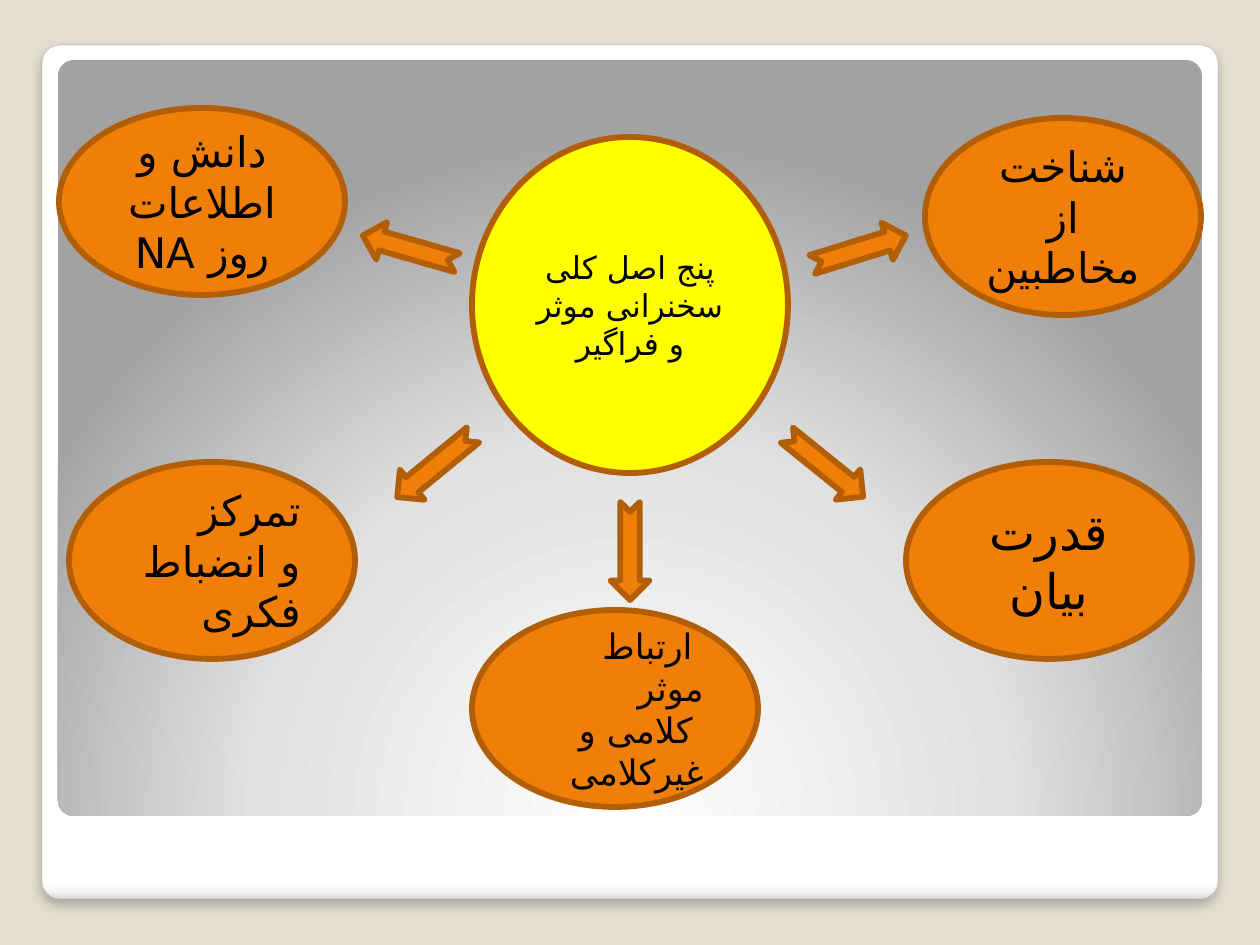
from pptx import Presentation, util as u
from pptx.dml.color import RGBColor
from pptx.enum import shapes, text
from pptx.oxml import parse_xml
from pptx.oxml.ns import nsdecls, qn

PX = 914400 / 126
FONT = "DejaVu Sans"
ORANGE, BROWN, YELLOW, BLACK = "F07F09", "B25E07", "FFFF00", "000000"
CENTER, RIGHT = text.PP_ALIGN.CENTER, text.PP_ALIGN.RIGHT

CARD = (42, 45, 1176, 854)
PANEL = (58, 60, 1144, 756)
HUB = (472, 137, 316, 336)
PRINCIPLES = [
    ((925, 118, 276, 197), "شناخت از مخاطبین", 24, CENTER),
    ((59, 108, 286, 187), "دانش و اطلاعات روز NA", 24, CENTER),
    ((906, 462, 286, 197), "قدرت بیان", 28, CENTER),
    ((69, 462, 286, 197), "تمرکز\vو انضباط فکری", 24, RIGHT),
    ((472, 610, 286, 197), " ارتباط موثر\v کلامی و\vغیرکلامی", 20, RIGHT),
]
ARROW_SIZE = (98, 39)
ARROWS = [(859, 250, 342.8), (825, 466, 38.9), (630, 551, 90),
          (435, 466, 140.6), (410, 249, 196)]


def px(length):
    """Turn px into EMU."""
    return u.Emu(round(length * PX))


def color(value):
    """Turn a hex string into a colour."""
    return RGBColor.from_string(value)


def add_preset(slide, kind, box):
    """Add a preset shape without shadow."""
    shape = slide.shapes.add_shape(kind, *map(px, box))
    shape.shadow.inherit = False
    return shape


def paint(shape, fill):
    """Give a diagram part its fill and the shared outline."""
    shape.fill.solid()
    shape.fill.fore_color.rgb = color(fill)
    shape.line.color.rgb = color(BROWN)
    shape.line.width = u.Pt(3.35)


def add_gradient_box(slide, box, stops, direction):
    """Add a slightly rounded rectangle with a gradient."""
    shape = add_preset(slide, shapes.MSO_SHAPE.ROUNDED_RECTANGLE, box)
    shape.adjustments[0] = 0.021
    marks = "".join(f'<a:gs pos="{pos * 1000}"><a:srgbClr val="{value}"/></a:gs>'
                    for pos, value in stops)
    shape._element.spPr.insert(2, parse_xml(
        f'<a:gradFill {nsdecls("a")} rotWithShape="1"><a:gsLst>{marks}</a:gsLst>'
        f'{direction}</a:gradFill>'))
    return shape


def add_backdrop(slide, card_box, panel_box):
    """Draw the white card and the grey panel on it."""
    card = add_gradient_box(
        slide, card_box,
        [(0, "FFFFFF"), (98, "FFFFFF"), (99, "F7F7F7"), (100, "DADADA")],
        '<a:lin ang="5400000" scaled="0"/>')
    card.line.color.rgb = color("A4A4A4")
    card.line.width = u.Pt(0.16)
    card._element.spPr.find(qn("a:effectLst")).append(parse_xml(
        f'<a:outerShdw {nsdecls("a")} blurRad="76200" dist="50800" dir="5400000" '
        'algn="tl" rotWithShape="0"><a:srgbClr val="000000">'
        '<a:alpha val="25000"/></a:srgbClr></a:outerShdw>'))
    panel = add_gradient_box(
        slide, panel_box, [(0, "FFFFFF"), (55, "E1E1E1"), (100, "A2A2A2")],
        '<a:path path="circle"><a:fillToRect l="50000" t="175000" r="50000" '
        'b="-75000"/></a:path>')
    panel.line.fill.background()


def add_bubble(slide, box, label, size, align=CENTER, fill=ORANGE):
    """Draw an ellipse with a right-to-left label."""
    bubble = add_preset(slide, shapes.MSO_SHAPE.OVAL, box)
    paint(bubble, fill)
    frame = bubble.text_frame
    frame.word_wrap = True
    frame.vertical_anchor = text.MSO_ANCHOR.MIDDLE
    paragraph = frame.paragraphs[0]
    paragraph.text = label
    paragraph.alignment = align
    paragraph._p.get_or_add_pPr().set("rtl", "1")
    for run in paragraph.runs:
        run.font.size = u.Pt(size)
        run.font.name = FONT
        run.font.color.rgb = color(BLACK)
        run.font._element.append(
            parse_xml(f'<a:cs {nsdecls("a")} typeface="{FONT}"/>'))


def add_arrow(slide, center_x, center_y, angle):
    """Draw a notched arrow turned about its centre."""
    width, height = ARROW_SIZE
    arrow = add_preset(slide, shapes.MSO_SHAPE.NOTCHED_RIGHT_ARROW,
                       (center_x - width / 2, center_y - height / 2, width, height))
    paint(arrow, ORANGE)
    arrow.rotation = angle


def main():
    """Build and save the slide."""
    deck = Presentation()
    deck.slide_width, deck.slide_height = px(1260), px(945)
    slide = deck.slides.add_slide(deck.slide_layouts[6])
    slide.background.fill.solid()
    slide.background.fill.fore_color.rgb = color("E3DED1")
    add_backdrop(slide, CARD, PANEL)
    for principle in PRINCIPLES:
        add_bubble(slide, *principle)
    add_bubble(slide, HUB, "پنج اصل کلی سخنرانی موثر و فراگیر", 18, fill=YELLOW)
    for arrow in ARROWS:
        add_arrow(slide, *arrow)
    deck.save("out.pptx")


if __name__ == "__main__":
    main()
